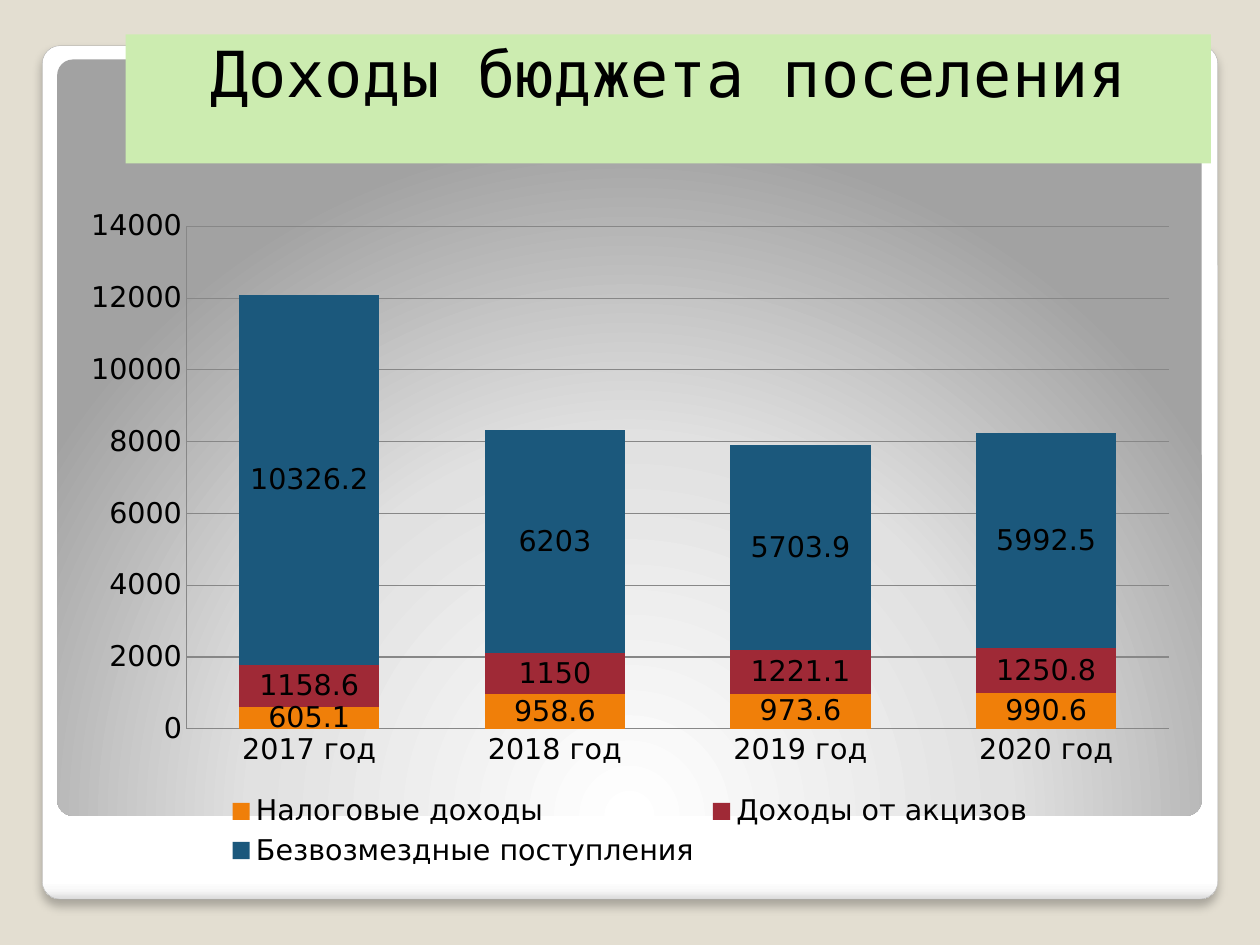
from lxml import etree
from pptx import Presentation
from pptx import util as u
from pptx.chart import data as cd
from pptx.dml.color import RGBColor
from pptx.enum import chart as ch, shapes, text
from pptx.oxml import ns, parse_xml

SAND = RGBColor(0xE3, 0xDE, 0xD1)
LIME = RGBColor(0xCC, 0xEC, 0xB0)
BLACK = RGBColor(0, 0, 0)
GREY = RGBColor(0xA4, 0xA4, 0xA4)
GRID = RGBColor(0x87, 0x87, 0x87)
ORANGE = RGBColor(0xF0, 0x7F, 0x09)
RED = RGBColor(0x9F, 0x29, 0x36)
BLUE = RGBColor(0x1B, 0x58, 0x7C)

YEARS = ["2017 год", "2018 год", "2019 год", "2020 год"]
INCOME = [
    ("Налоговые доходы", ORANGE, (605.1, 958.6, 973.6, 990.6)),
    ("Доходы от акцизов", RED, (1158.6, 1150, 1221.1, 1250.8)),
    ("Безвозмездные поступления", BLUE, (10326.2, 6203, 5703.9, 5992.5)),
]
LINEAR = '<a:lin ang="5400000" scaled="0"/>'
RADIAL = ('<a:path path="circle"><a:fillToRect l="50000" t="175000" '
          'r="50000" b="-75000"/></a:path>')


def write(frame, words, size=40, face="DejaVu Sans Mono", color=BLACK,
          align=text.PP_ALIGN.CENTER):
    para = frame.paragraphs[0]
    para.alignment = align
    run = para.add_run()
    run.text = words
    run.font.size, run.font.name = u.Pt(size), face
    run.font.bold = False
    run.font.color.rgb = color


def shade(stops, path):
    marks = "".join(f'<a:gs pos="{pos * 1000}"><a:srgbClr val="{tone}"/></a:gs>'
                    for pos, tone in stops)
    return parse_xml(f'<a:gradFill {ns.nsdecls("a")} rotWithShape="1">'
                     f'<a:gsLst>{marks}</a:gsLst>{path}</a:gradFill>')


class Deck:
    face = "DejaVu Sans"
    size = 18

    def __init__(self, wide, high):
        self.prs = Presentation()
        self.prs.slide_width, self.prs.slide_height = u.Pt(wide), u.Pt(high)
        self.slide = self.prs.slides.add_slide(self.prs.slide_layouts[5])
        fill = self.slide.background.fill
        fill.solid()
        fill.fore_color.rgb = SAND

    def panel(self, box, stops, path, line=None, drop=False):
        shape = self.slide.shapes.add_shape(
            shapes.MSO_SHAPE.ROUNDED_RECTANGLE, *map(u.Pt, box))
        shape.adjustments[0] = 0.021
        shape.shadow.inherit = False
        props = shape.element.spPr
        props.find(ns.qn("a:prstGeom")).addnext(shade(stops, path))
        if line is None:
            shape.line.fill.background()
        else:
            shape.line.color.rgb = line
            shape.line.width = u.Pt(0.16)
        if drop:
            shadow = etree.SubElement(
                props.find(ns.qn("a:effectLst")), ns.qn("a:outerShdw"),
                blurRad=str(u.Pt(6)), dist=str(u.Pt(4)), dir="5400000",
                algn="t", rotWithShape="0")
            tone = etree.SubElement(shadow, ns.qn("a:srgbClr"), val="000000")
            etree.SubElement(tone, ns.qn("a:alpha"), val="25000")

    def title(self, box, words):
        head = self.slide.shapes.title
        head.left, head.top, head.width, head.height = map(u.Pt, box)
        head.fill.solid()
        head.fill.fore_color.rgb = LIME
        frame = head.text_frame
        frame.margin_left = frame.margin_right = 0
        frame.margin_top = frame.margin_bottom = 0
        frame.vertical_anchor = text.MSO_ANCHOR.TOP
        frame.auto_size = text.MSO_AUTO_SIZE.NONE
        frame.word_wrap = True
        write(frame, words)
        head.element.getparent().append(head.element)

    def chart(self, box, cats, rows, plot_box):
        data = cd.CategoryChartData()
        data.categories = cats
        for name, _, vals in rows:
            data.add_series(name, vals)
        chart = self.slide.shapes.add_chart(
            ch.XL_CHART_TYPE.COLUMN_STACKED, *map(u.Pt, box), data).chart
        chart.has_title = False
        chart.font.size, chart.font.name = u.Pt(self.size), self.face
        chart.font.color.rgb = BLACK
        chart.has_legend = True
        chart.legend.position = ch.XL_LEGEND_POSITION.BOTTOM
        chart.legend.include_in_layout = False
        plot = chart.plots[0]
        plot.gap_width, plot.overlap = 75, 100
        plot.vary_by_categories = False
        for row, (_, color, _) in zip(plot.series, rows):
            row.format.fill.solid()
            row.format.fill.fore_color.rgb = color
            row.data_labels.show_value = True
            row.data_labels.position = ch.XL_LABEL_POSITION.CENTER
        for axis in (chart.category_axis, chart.value_axis):
            axis.major_tick_mark = axis.minor_tick_mark = ch.XL_TICK_MARK.NONE
            axis.format.line.color.rgb = GRID
        axis = chart.value_axis
        axis.minimum_scale, axis.maximum_scale, axis.major_unit = 0, 14000, 2000
        axis.has_major_gridlines = True
        axis.major_gridlines.format.line.color.rgb = GRID
        self.place(chart, plot_box)

    def place(self, chart, box):
        area = chart.element.find(".//" + ns.qn("c:plotArea"))
        for old in area.findall(ns.qn("c:layout")):
            area.remove(old)
        keys = ["layoutTarget", "xMode", "yMode", "x", "y", "w", "h"]
        layout = etree.Element(ns.qn("c:layout"))
        manual = etree.SubElement(layout, ns.qn("c:manualLayout"))
        for key, val in zip(keys, ["inner", "edge", "edge", *box]):
            etree.SubElement(manual, ns.qn("c:" + key), val=str(val))
        area.insert(0, layout)


def main():
    deck = Deck(794.16, 595.44)
    deck.panel((26.64, 28.8, 740.88, 537.84),
               [(0, "FFFFFF"), (98, "FFFFFF"), (99, "F7F7F7"), (100, "DADADA")],
               LINEAR, line=GREY, drop=True)
    deck.panel((36, 37.44, 721.44, 476.64),
               [(0, "FFFFFF"), (55, "E1E1E1"), (100, "A2A2A2")], RADIAL)
    deck.title((79.2, 21.6, 684, 81.36), "Доходы бюджета поселения")
    deck.chart((43.2, 123.84, 707.76, 426.24), YEARS, INCOME,
               (0.105, 0.044, 0.875, 0.743))
    deck.prs.save("out.pptx")


if __name__ == "__main__":
    main()
